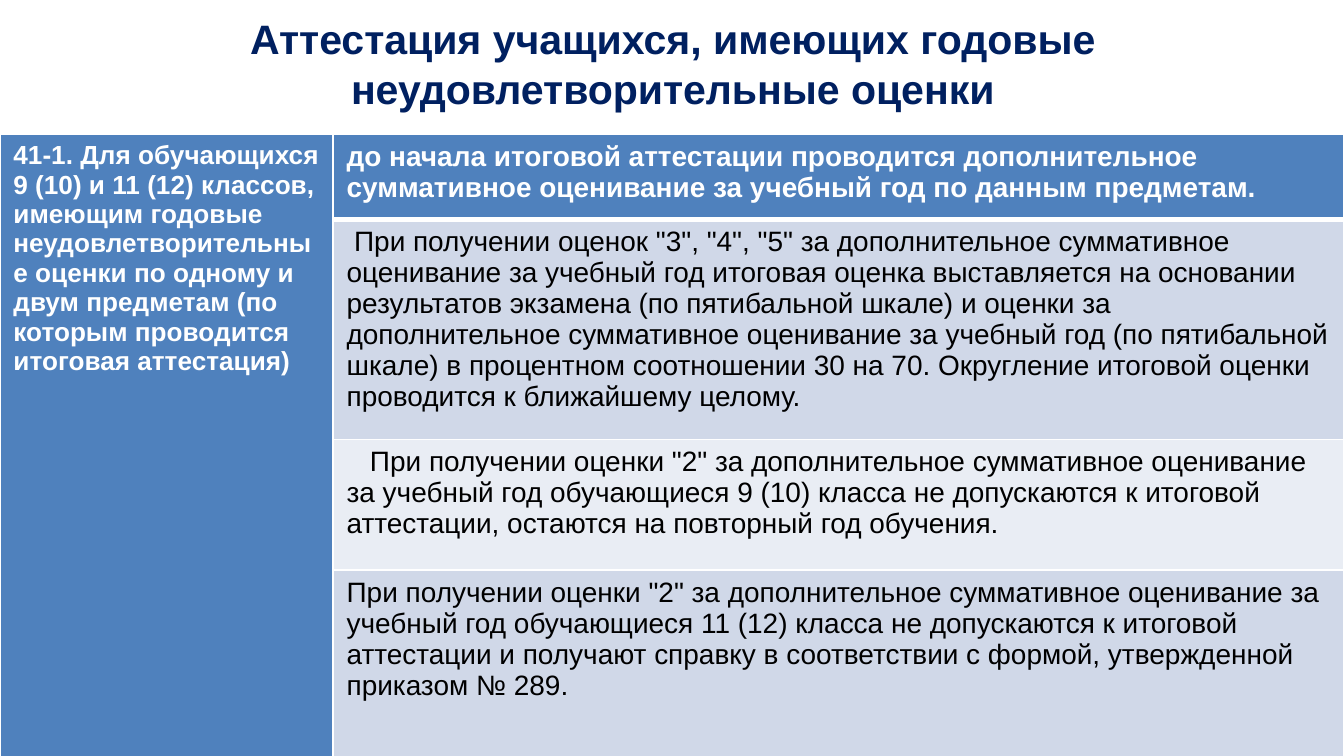
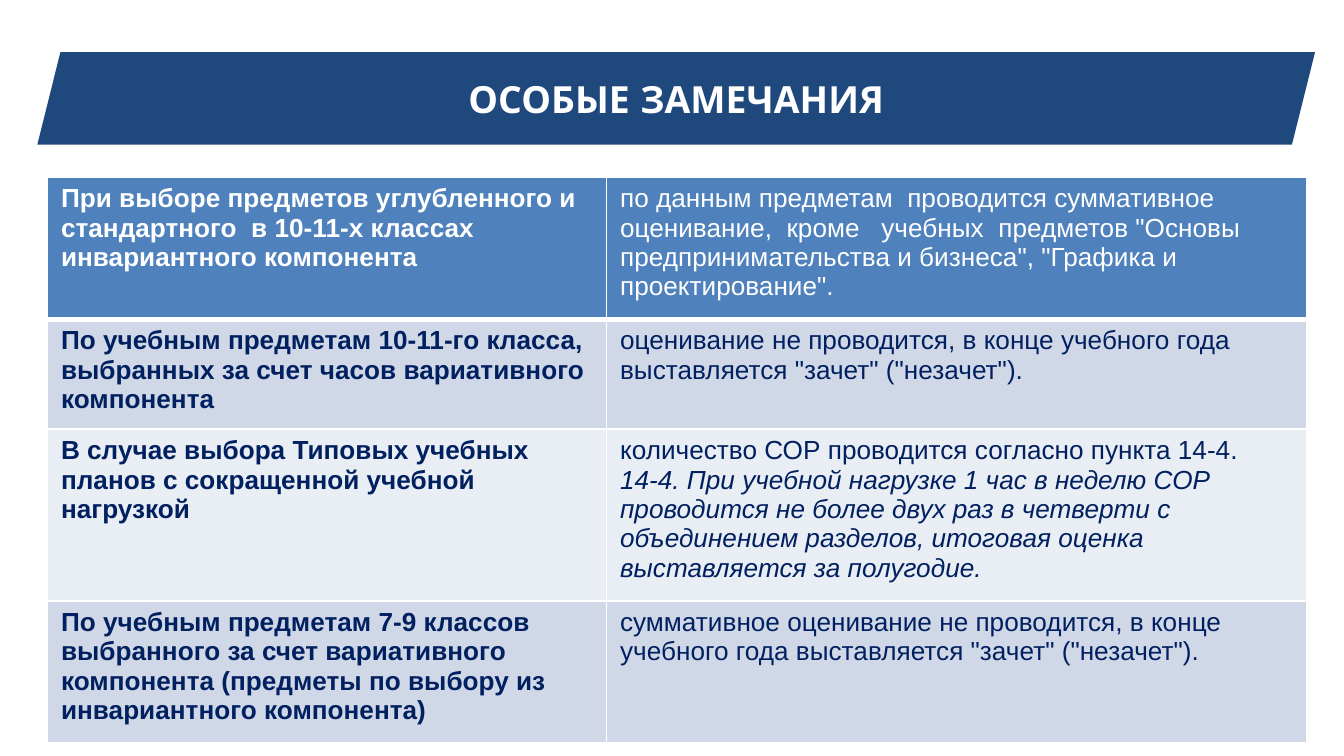
from lxml import etree
from pptx import Presentation
from pptx.dml.color import RGBColor
from pptx.enum.shapes import MSO_SHAPE
from pptx.enum.text import MSO_ANCHOR, PP_ALIGN
from pptx.oxml.ns import qn
from pptx.util import Pt

PARALLELOGRAM = MSO_SHAPE.PARALLELOGRAM
MIDDLE = MSO_ANCHOR.MIDDLE
CENTER = PP_ALIGN.CENTER

WHITE = RGBColor(0xFF, 0xFF, 0xFF)
BLACK = RGBColor(0, 0, 0)
NAVY = RGBColor(0x00, 0x20, 0x60)
BANNER_BLUE = RGBColor(0x1F, 0x49, 0x7D)
HEADER_BLUE = RGBColor(0x4F, 0x81, 0xBD)
BAND_DARK = RGBColor(0xD0, 0xD8, 0xE8)
BAND_LIGHT = RGBColor(0xE9, 0xED, 0xF4)

TITLE_ONLY, BLANK = 5, 6
TEXT_FONT = "Arial"
BANNER_FONT = "Quicksand"

FAILING_TITLE = "Аттестация учащихся, имеющих годовые неудовлетворительные оценки"
FAILING_GROUP = (
    "41-1. Для обучающихся 9 (10) и 11 (12) классов, имеющим годовые "
    "неудовлетворительные оценки по одному и двум предметам "
    "(по которым проводится итоговая аттестация)"
)
FAILING_RULES = [
    ("до начала итоговой аттестации проводится дополнительное суммативное "
     "оценивание за учебный год по данным предметам.", 0),
    ('При получении оценок "3", "4", "5" за дополнительное суммативное оценивание '
     "за учебный год итоговая оценка выставляется на основании результатов экзамена "
     "(по пятибальной шкале) и оценки за дополнительное суммативное оценивание за "
     "учебный год (по пятибальной шкале) в процентном соотношении 30 на 70. "
     "Округление итоговой оценки проводится к ближайшему целому.", 4),
    ('При получении оценки "2" за дополнительное суммативное оценивание за учебный '
     "год обучающиеся 9 (10) класса не допускаются к итоговой аттестации, остаются "
     "на повторный год обучения.", 12.5),
    ('При получении оценки "2" за дополнительное суммативное оценивание за учебный '
     "год обучающиеся 11 (12) класса не допускаются к итоговой аттестации и получают "
     "справку в соответствии с формой, утвержденной приказом № 289.", 0),
]

REMARKS_TITLE = "ОСОБЫЕ ЗАМЕЧАНИЯ"
REMARKS = [
    ("При выборе предметов углубленного и стандартного  в 10-11-х классах "
     "инвариантного компонента",
     ["по данным предметам  проводится суммативное оценивание,  кроме   учебных  "
      'предметов "Основы предпринимательства и бизнеса", "Графика и проектирование".']),
    ("По учебным предметам 10-11-го класса, выбранных за счет часов вариативного "
     "компонента",
     ['оценивание не проводится, в конце учебного года выставляется "зачет" ("незачет").']),
    ("В случае выбора Типовых учебных планов с сокращенной учебной нагрузкой",
     ["количество СОР проводится согласно пункта 14-4.",
      "14-4. При учебной нагрузке 1 час в неделю СОР проводится не более двух раз в "
      "четверти с объединением разделов, итоговая оценка выставляется за полугодие."]),
    ("По учебным предметам 7-9 классов выбранного за счет вариативного компонента "
     "(предметы по выбору из инвариантного компонента)",
     ["суммативное оценивание не проводится, в конце учебного года выставляется "
      '"зачет" ("незачет").']),
]


def style_paragraph(paragraph, size, color, bold=False, italic=False, font=TEXT_FONT):
    paragraph.font.name = font
    paragraph.font.size = Pt(size)
    paragraph.font.color.rgb = color
    paragraph.font.bold = bold
    paragraph.font.italic = italic


def set_borders(cell, row):
    properties = cell._tc.get_or_add_tcPr()
    widths = {"L": 1, "R": 1, "T": 3 if row == 1 else 1, "B": 3 if row == 0 else 1}
    for side, width in widths.items():
        line = etree.SubElement(properties, qn(f"a:ln{side}"), w=str(Pt(width)))
        fill = etree.SubElement(line, qn("a:solidFill"))
        etree.SubElement(fill, qn("a:srgbClr"), val=str(WHITE))


def add_banded_table(slide, left, top, column_widths, row_heights):
    table = slide.shapes.add_table(
        len(row_heights), len(column_widths), Pt(left), Pt(top),
        Pt(sum(column_widths)), Pt(sum(row_heights)),
    ).table
    for column, width in zip(table.columns, column_widths):
        column.width = Pt(width)
    for index, (row, height) in enumerate(zip(table.rows, row_heights)):
        row.height = Pt(height)
        for cell in row.cells:
            set_borders(cell, index)
            cell.fill.solid()
            band = BAND_DARK if index % 2 else BAND_LIGHT
            cell.fill.fore_color.rgb = band if index else HEADER_BLUE
    return table


def write_cell(cell, texts, size, color, bold=False):
    cell.text = "\n".join(texts)
    for index, paragraph in enumerate(cell.text_frame.paragraphs):
        style_paragraph(paragraph, size, color, bold, italic=index > 0)


def build_failing_slide(presentation):
    slide = presentation.slides.add_slide(presentation.slide_layouts[TITLE_ONLY])
    title = slide.shapes.title
    title.left, title.top, title.width, title.height = Pt(36.5), Pt(0), Pt(648), Pt(67.5)
    title.text_frame.text = FAILING_TITLE
    title.text_frame.vertical_anchor = MIDDLE
    paragraph = title.text_frame.paragraphs[0]
    paragraph.alignment = CENTER
    style_paragraph(paragraph, 22, NAVY, bold=True)

    table = add_banded_table(slide, 0, 72, [178.5, 541.5], [45.5, 118, 70, 99.5])
    table.cell(0, 0).merge(table.cell(len(FAILING_RULES) - 1, 0))
    write_cell(table.cell(0, 0), [FAILING_GROUP], 14, WHITE, bold=True)
    for row, (rule, indent) in enumerate(FAILING_RULES):
        cell = table.cell(row, 1)
        write_cell(cell, [rule], 15, BLACK if row else WHITE, bold=row == 0)
        if indent:
            properties = cell.text_frame.paragraphs[0]._p.get_or_add_pPr()
            properties.set("indent", str(Pt(indent)))


def build_remarks_slide(presentation):
    slide = presentation.slides.add_slide(presentation.slide_layouts[BLANK])
    banner = slide.shapes.add_shape(PARALLELOGRAM, Pt(20), Pt(28), Pt(684.5), Pt(49.5))
    banner.shadow.inherit = False
    banner.fill.solid()
    banner.fill.fore_color.rgb = BANNER_BLUE
    banner.line.fill.background()
    banner.text_frame.text = REMARKS_TITLE
    banner.text_frame.vertical_anchor = MIDDLE
    paragraph = banner.text_frame.paragraphs[0]
    paragraph.alignment = CENTER
    style_paragraph(paragraph, 20, WHITE, bold=True, font=BANNER_FONT)

    table = add_banded_table(slide, 25.5, 95, [299.5, 375], [76, 59, 92, 76])
    for row, (case, remarks) in enumerate(REMARKS):
        color = NAVY if row else WHITE
        write_cell(table.cell(row, 0), [case], 14, color, bold=True)
        write_cell(table.cell(row, 1), remarks, 14, color)


def main():
    presentation = Presentation()
    presentation.slide_width = Pt(720)
    presentation.slide_height = Pt(405)
    build_failing_slide(presentation)
    build_remarks_slide(presentation)
    presentation.save("out.pptx")


if __name__ == "__main__":
    main()
